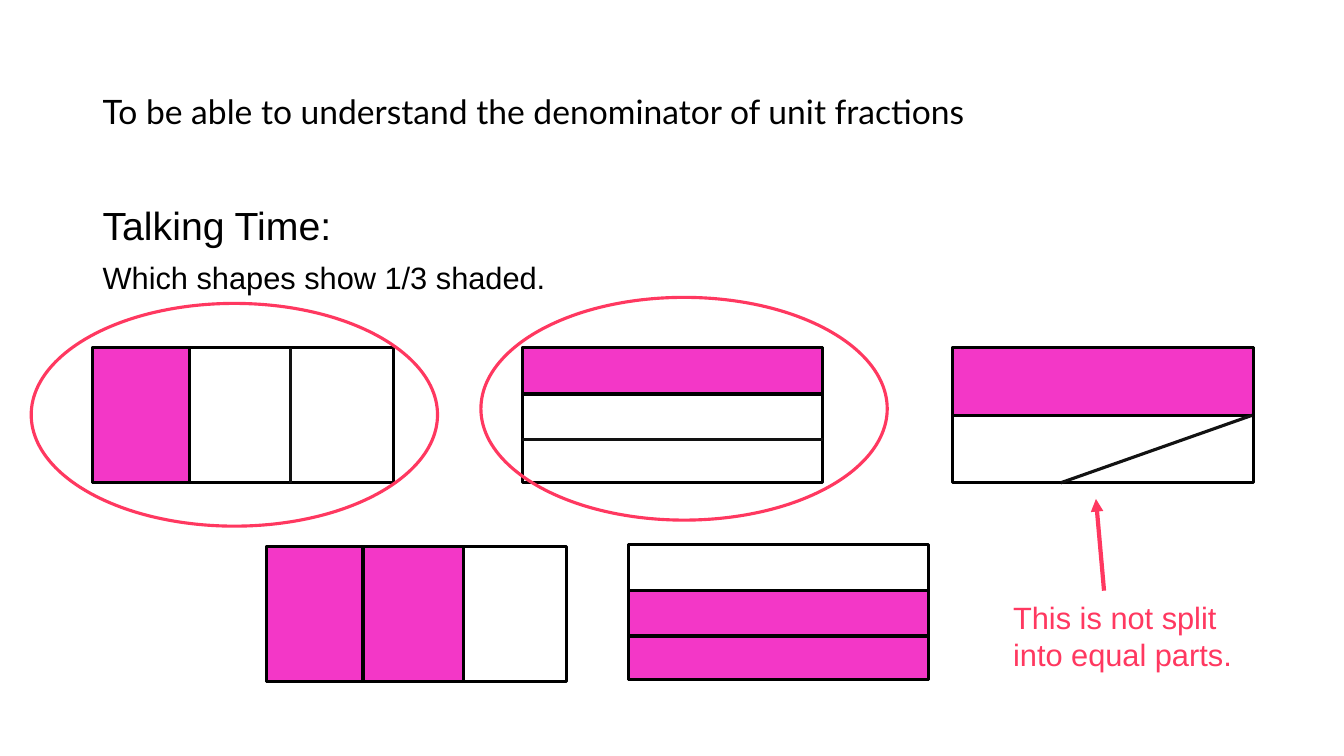
from lxml.etree import SubElement
from pptx import Presentation
from pptx.dml.color import RGBColor
from pptx.enum.shapes import MSO_CONNECTOR as Connector, MSO_SHAPE as Shape
from pptx.enum.text import MSO_ANCHOR as Anchor
from pptx.oxml.ns import qn
from pptx.util import Inches, Pt

COLORS = {"white": "FFFFFF", "black": "000000", "divider": "121212",
          "shaded": "F337C7", "answer": "FF3860"}
BAR_WIDTH, BAR_HEIGHT = 2.98, 1.34
COLUMN_CUTS = (0, 0.96, 1.96, BAR_WIDTH)
ROW_CUTS = (0, 0.46, 0.91, BAR_HEIGHT)
HALF_CUTS = (0, 0.67, BAR_HEIGHT)


def color(name):
    """Return the named colour."""
    return RGBColor.from_string(COLORS[name])


def add_outline(page, kind, left, top, width, height, line, fill=None):
    """Add an outlined shape, filled if a fill is named."""
    shape = page.shapes.add_shape(kind, Inches(left), Inches(top), Inches(width), Inches(height))
    shape.shadow.inherit = False
    shape.line.color.rgb = color(line)
    shape.line.width = Pt(2.25)
    if fill:
        shape.fill.solid()
        shape.fill.fore_color.rgb = color(fill)
    else:
        shape.fill.background()


def add_line(page, start, end, line="divider", width=2.25, arrow=False):
    """Add a straight line, with an arrowhead at its end on request."""
    connector = page.shapes.add_connector(
        Connector.STRAIGHT, *(Inches(value) for value in (*start, *end)))
    connector.line.color.rgb = color(line)
    connector.line.width = Pt(width)
    if arrow:
        SubElement(connector.line._get_or_add_ln(), qn("a:tailEnd"), type="triangle")
    SubElement(connector._element.spPr, qn("a:effectLst"))


def add_bar(page, left, top, cuts, shaded, columns=False):
    """Add a bar split at the cuts into columns or rows, some of them shaded."""
    add_outline(page, Shape.RECTANGLE, left, top, BAR_WIDTH, BAR_HEIGHT, "black", "white")
    for cut in cuts[1:-1]:
        if columns:
            add_line(page, (left + cut, top), (left + cut, top + BAR_HEIGHT))
        else:
            add_line(page, (left, top + cut), (left + BAR_WIDTH, top + cut))
    for part in shaded:
        start, size = cuts[part], cuts[part + 1] - cuts[part]
        if columns:
            place = (left + start, top, size, BAR_HEIGHT)
        else:
            place = (left, top + start, BAR_WIDTH, size)
        add_outline(page, Shape.RECTANGLE, *place, "black", "shaded")


def add_text(page, left, top, width, height, lines, font="Arial", ink="black",
             anchor=Anchor.TOP, spacing=0.9):
    """Add a text box with one paragraph per (text, size) line."""
    box = page.shapes.add_textbox(Inches(left), Inches(top), Inches(width), Inches(height))
    frame = box.text_frame
    frame.word_wrap = True
    frame.vertical_anchor = anchor
    frame.text = "\n".join(text for text, size in lines)
    for index, (para, (text, size)) in enumerate(zip(frame.paragraphs, lines)):
        para.line_spacing = spacing
        para.space_before = Pt(10 if index else 0)
        para.font.name = font
        para.font.size = Pt(size)
        para.font.color.rgb = color(ink)


def main():
    """Build the unit fractions slide."""
    deck = Presentation()
    deck.slide_width, deck.slide_height = Inches(13.33), Inches(7.5)
    page = deck.slides.add_slide(deck.slide_layouts[6])

    add_text(page, 0.92, 0.4, 9.6, 1.45,
             [("To be able to understand the denominator of unit fractions", 24)],
             font="Lato", anchor=Anchor.MIDDLE)
    add_text(page, 0.92, 2, 11.5, 4.76,
             [("Talking Time:", 28), ("Which shapes show 1/3 shaded.", 22)])

    add_bar(page, 0.92, 3.45, COLUMN_CUTS, [0], columns=True)
    add_bar(page, 5.18, 3.45, ROW_CUTS, [0])
    add_bar(page, 9.45, 3.45, HALF_CUTS, [0])
    add_line(page, (10.52, 4.79), (12.42, 4.12))
    add_bar(page, 2.64, 5.42, COLUMN_CUTS, [0, 1], columns=True)
    add_bar(page, 6.23, 5.4, ROW_CUTS, [1, 2])

    for left, top in ((4.77, 2.95), (0.31, 3.01)):
        add_outline(page, Shape.OVAL, left, top, 4.03, 2.21, "answer")
    add_line(page, (10.95, 5.86), (10.87, 4.95), "answer", 3, arrow=True)
    add_text(page, 9.95, 5.89, 2.69, 0.84, [("This is not split into equal parts.", 22)],
             ink="answer", spacing=1.0)
    deck.save("out.pptx")


if __name__ == "__main__":
    main()
